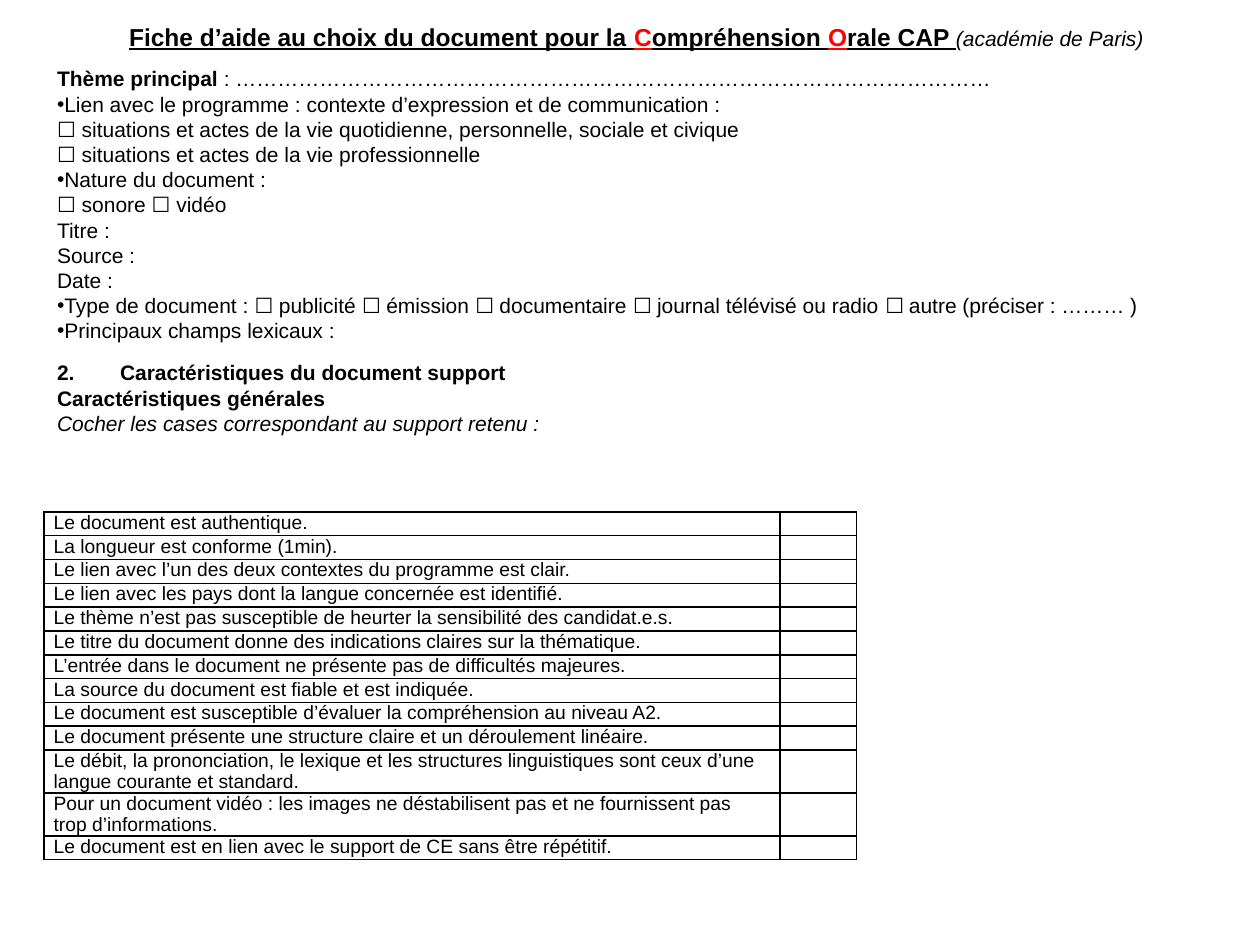
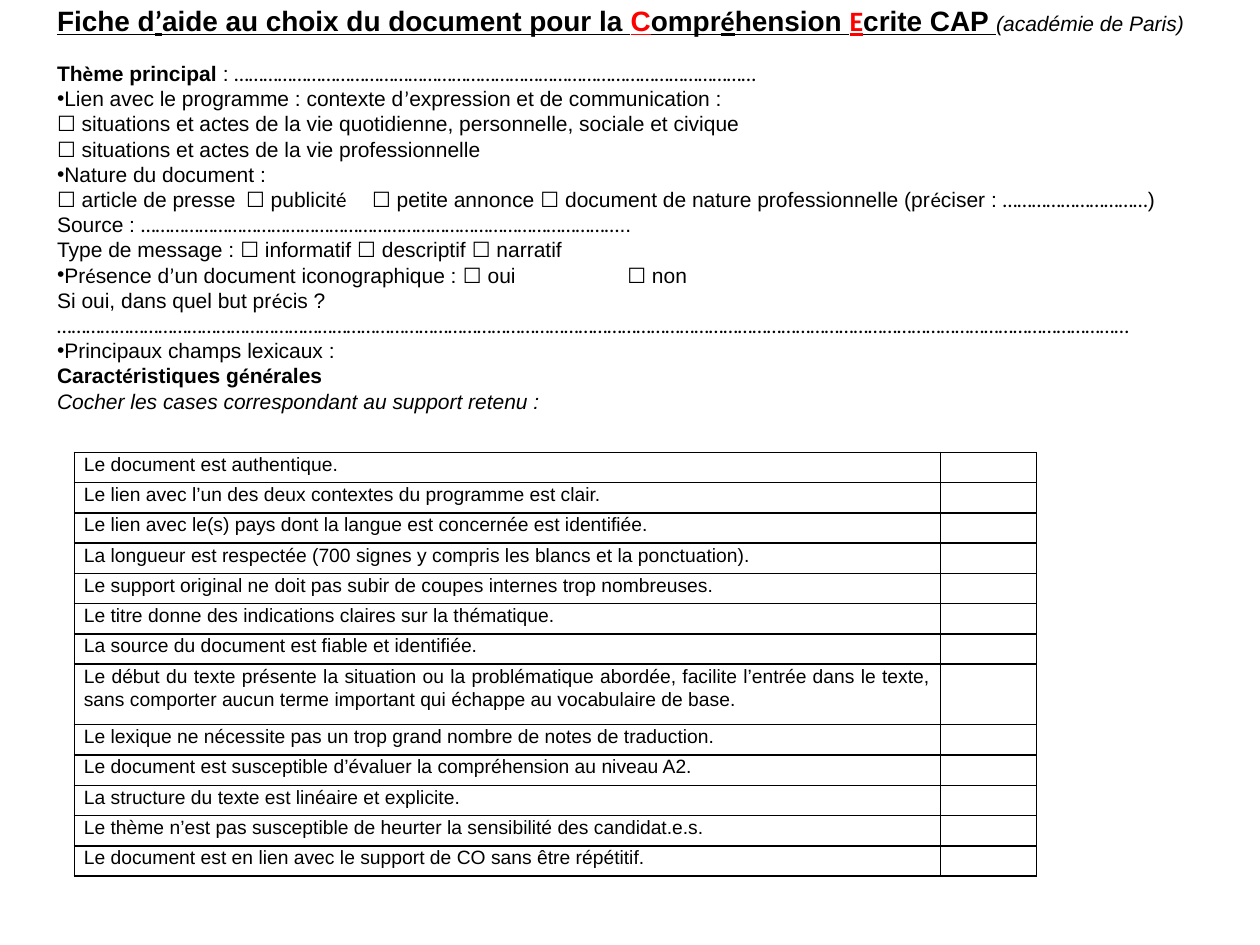
from dataclasses import dataclass
from itertools import groupby

from lxml.etree import SubElement
from pptx import Presentation
from pptx.dml.color import RGBColor
from pptx.enum.text import MSO_ANCHOR as Anchor, MSO_AUTO_SIZE as AutoSize, PP_ALIGN as Align
from pptx.oxml.ns import qn
from pptx.util import Cm, Pt


@dataclass(frozen=True)
class Theme:
    ink: RGBColor = RGBColor(0, 0, 0)
    initial: RGBColor = RGBColor(255, 0, 0)
    font: str = "Arial"
    symbol_font: str = "Calibri"
    cjk_font: str = "Noto Sans CJK JP"
    symbols: str = "’éè…☐"
    body_size: Pt = Pt(12)
    table_size: Pt = Pt(11)
    body_line: Pt = Pt(14.4)
    section_gap: Pt = Pt(9.6)
    border: Pt = Pt(1)


@dataclass
class Box:
    left: float
    top: float
    width: float
    height: float = 0


@dataclass
class Line:
    spans: list
    bullet: bool = False
    tabs: tuple = ((6.99, "l"), (12.7, "r"))
    section: bool = False


@dataclass
class Checklist:
    box: Box
    mark_width: float
    row_height: float
    tall_height: float
    tall_rows: tuple
    tall_align: Align
    line_spacing: float
    criteria: list


THEME = Theme()
DOTS = "…"


# Shared text helpers
def style_run(run, size, flags=(), symbol=False):
    font = run.font
    font.size = size
    font.bold = "bold" in flags
    font.italic = "italic" in flags
    font.underline = "underline" in flags
    font.color.rgb = THEME.initial if "initial" in flags else THEME.ink
    if "cjk" in flags:
        font.name = THEME.cjk_font
    else:
        font.name = THEME.symbol_font if symbol else THEME.font


def add_spans(para, spans, size, mixed):
    """Add (text, flags) spans; mixed pages set symbols in a second font."""
    for text, flags in spans:
        flags = flags.split()

        def is_symbol(char):
            return "symbol" in flags or (
                mixed and "italic" not in flags and char in THEME.symbols)

        for symbol, chars in groupby(text, is_symbol):
            run = para.add_run()
            run.text = "".join(chars)
            style_run(run, THEME.body_size if "small" in flags else size, flags, symbol)


def place_frame(holder, box):
    holder.left, holder.top = Cm(box.left), Cm(box.top)
    holder.width, holder.height = Cm(box.width), Cm(box.height)
    frame = holder.text_frame
    frame.word_wrap = True
    frame.auto_size = AutoSize.NONE
    frame.vertical_anchor = Anchor.TOP
    frame.margin_left, frame.margin_right = Cm(0.64), Cm(0.2)
    frame.margin_top = frame.margin_bottom = 0
    return frame


def set_list_format(para, line):
    props = para._p.get_or_add_pPr()
    props.set("marL", "0")
    props.set("indent", "0")
    if line.bullet:
        SubElement(props, qn("a:buFont"), typeface=THEME.font)
        SubElement(props, qn("a:buChar"), char="•")
    else:
        SubElement(props, qn("a:buNone"))
    stops = SubElement(props, qn("a:tabLst"))
    for position, side in line.tabs:
        SubElement(stops, qn("a:tab"), pos=str(Cm(position)), algn=side)


# Regions of a page
def fill_title(page, box, spans, size, align, mixed):
    para = place_frame(page.shapes.title, box).paragraphs[0]
    para.alignment = align
    add_spans(para, spans, size, mixed)


def fill_form(page, box, lines, mixed):
    frame = place_frame(page.placeholders[1], box)
    for index, line in enumerate(lines):
        para = frame.add_paragraph() if index else frame.paragraphs[0]
        set_list_format(para, line)
        para.line_spacing = THEME.body_line
        para.space_before = THEME.section_gap if line.section else Pt(0)
        add_spans(para, line.spans, THEME.body_size, mixed)


def format_cell(cell):
    cell.margin_left = cell.margin_right = Cm(0.19)
    cell.margin_top = cell.margin_bottom = 0
    props = cell._tc.get_or_add_tcPr()
    for side in ("lnL", "lnR", "lnT", "lnB"):
        edge = SubElement(props, qn(f"a:{side}"), w=str(THEME.border))
        paint = SubElement(edge, qn("a:solidFill"))
        SubElement(paint, qn("a:srgbClr"), val=str(THEME.ink))
    cell.fill.background()


def add_checklist(page, checklist):
    box, criteria = checklist.box, checklist.criteria
    heights = [checklist.tall_height if index in checklist.tall_rows else checklist.row_height
               for index in range(len(criteria))]
    table = page.shapes.add_table(len(criteria), 2, Cm(box.left), Cm(box.top),
                                  Cm(box.width), Cm(sum(heights))).table
    table.first_row = table.horz_banding = False
    table.columns[0].width = Cm(box.width - checklist.mark_width)
    table.columns[1].width = Cm(checklist.mark_width)
    for index, (criterion, height) in enumerate(zip(criteria, heights)):
        table.rows[index].height = Cm(height)
        label, mark = table.cell(index, 0), table.cell(index, 1)
        format_cell(label)
        format_cell(mark)
        para = label.text_frame.paragraphs[0]
        para.text = criterion
        para.line_spacing = checklist.line_spacing
        if index in checklist.tall_rows:
            para.alignment = checklist.tall_align
        style_run(para.runs[0], THEME.table_size)
        # Empty cells keep the row low
        SubElement(mark.text_frame.paragraphs[0]._p, qn("a:endParaRPr"),
                   sz=str(int(THEME.table_size.pt * 100)))


# Content shared by both forms
def plain(text, **options):
    return Line([(text, "")], **options)


def bullet(text):
    return plain(text, bullet=True)


HEADING = "bold underline"
ACADEMY = ("(académie de Paris)", "italic small")
OPENING = [
    Line([("Thème principal", "bold"), (" : " + DOTS * 36, "")]),
    bullet("Lien avec le programme : contexte d’expression et de communication :"),
    plain("☐ situations et actes de la vie quotidienne, personnelle, sociale et civique"),
]
PROFESSIONAL = " situations et actes de la vie professionnelle"
NATURE = bullet("Nature du document :")
LEXICON = bullet("Principaux champs lexicaux :")
CLOSING = [
    Line([("Caractéristiques générales", "bold")]),
    Line([("Cocher les cases correspondant au support retenu :", "italic")]),
]
AUTHENTIC = "Le document est authentique."
CONTEXT = "Le lien avec l’un des deux contextes du programme est clair."
LEVEL = "Le document est susceptible d’évaluer la compréhension au niveau A2."
SENSITIVITY = "Le thème n’est pas susceptible de heurter la sensibilité des candidat.e.s."


def build_oral_form(page):
    fill_title(page, Box(0.51, 0.44, 24.2, 0.75), [
        ("Fiche d’aide au choix du document pour la ", HEADING),
        ("C", HEADING + " initial"), ("ompréhension ", HEADING),
        ("O", HEADING + " initial"), ("rale CAP ", HEADING), ACADEMY,
    ], Pt(14), Align.CENTER, mixed=False)
    fill_form(page, Box(0.51, 1.33, 24.2, 7.5), OPENING + [
        plain("☐" + PROFESSIONAL),
        NATURE,
        plain("☐ sonore ☐ vidéo"),
        plain("Titre :"),
        plain("Source :"),
        plain("Date :"),
        bullet("Type de document : ☐ publicité ☐ émission ☐ documentaire "
               "☐ journal télévisé ou radio ☐ autre (préciser : ……… )"),
        LEXICON,
        Line([("2.\tCaractéristiques du document support", "bold")],
             tabs=((0.58, "l"),), section=True),
    ] + CLOSING, mixed=False)
    add_checklist(page, Checklist(
        Box(0.89, 10.32, 16.38), 1.55, 0.48, 0.86, (10, 11), Align.LEFT, 1.0, [
            AUTHENTIC,
            "La longueur est conforme (1min).",
            CONTEXT,
            "Le lien avec les pays dont la langue concernée est identifié.",
            SENSITIVITY,
            "Le titre du document donne des indications claires sur la thématique.",
            "L’entrée dans le document ne présente pas de difficultés majeures.",
            "La source du document est fiable et est indiquée.",
            LEVEL,
            "Le document présente une structure claire et un déroulement linéaire.",
            "Le débit, la prononciation, le lexique et les structures linguistiques "
            "sont ceux d’une langue courante et standard.",
            "Pour un document vidéo : les images ne déstabilisent pas et ne "
            "fournissent pas trop d’informations.",
            "Le document est en lien avec le support de CE sans être répétitif.",
        ]))


def build_written_form(page):
    fill_title(page, Box(0.51, 0.07, 24, 0.75), [
        ("Fiche d’aide au choix du document pour la ", HEADING),
        ("C", HEADING + " initial"), ("ompréhension ", HEADING),
        ("E", HEADING + " initial symbol"), ("crite CAP ", HEADING), ACADEMY,
    ], Pt(16), Align.LEFT, mixed=True)
    fill_form(page, Box(0.51, 1.22, 24, 7.5), OPENING + [
        Line([("☐", "cjk"), (PROFESSIONAL, "")]),
        NATURE,
        plain("☐ article de presse\t☐ publicité\t☐ petite annonce "
              "☐ document de nature professionnelle (préciser : " + DOTS * 10 + ")",
              tabs=((4.08, "l"), (6.35, "l"))),
        plain("Source : " + DOTS * 33 + ".."),
        plain("Type de message : ☐ informatif ☐ descriptif ☐ narratif"),
        bullet("Présence d’un document iconographique : ☐ oui\t☐ non"),
        plain("Si oui, dans quel but précis ? " + DOTS * 74),
        LEXICON,
    ] + CLOSING, mixed=True)
    add_checklist(page, Checklist(
        Box(1.5, 9.12, 19.4), 1.94, 0.61, 1.22, (7,), Align.JUSTIFY, 1.07, [
            AUTHENTIC,
            CONTEXT,
            "Le lien avec le(s) pays dont la langue est concernée est identifiée.",
            "La longueur est respectée (700 signes y compris les blancs et la ponctuation).",
            "Le support original ne doit pas subir de coupes internes trop nombreuses.",
            "Le titre donne des indications claires sur la thématique.",
            "La source du document est fiable et identifiée.",
            "Le début du texte présente la situation ou la problématique abordée, "
            "facilite l’entrée dans le texte, sans comporter aucun terme important "
            "qui échappe au vocabulaire de base.",
            "Le lexique ne nécessite pas un trop grand nombre de notes de traduction.",
            LEVEL,
            "La structure du texte est linéaire et explicite.",
            SENSITIVITY,
            "Le document est en lien avec le support de CO sans être répétitif.",
        ]))


def main():
    deck = Presentation()
    deck.slide_width, deck.slide_height = Cm(25.4), Cm(19.05)
    for build_form in (build_oral_form, build_written_form):
        build_form(deck.slides.add_slide(deck.slide_layouts[1]))
    deck.save("out.pptx")


if __name__ == "__main__":
    main()
